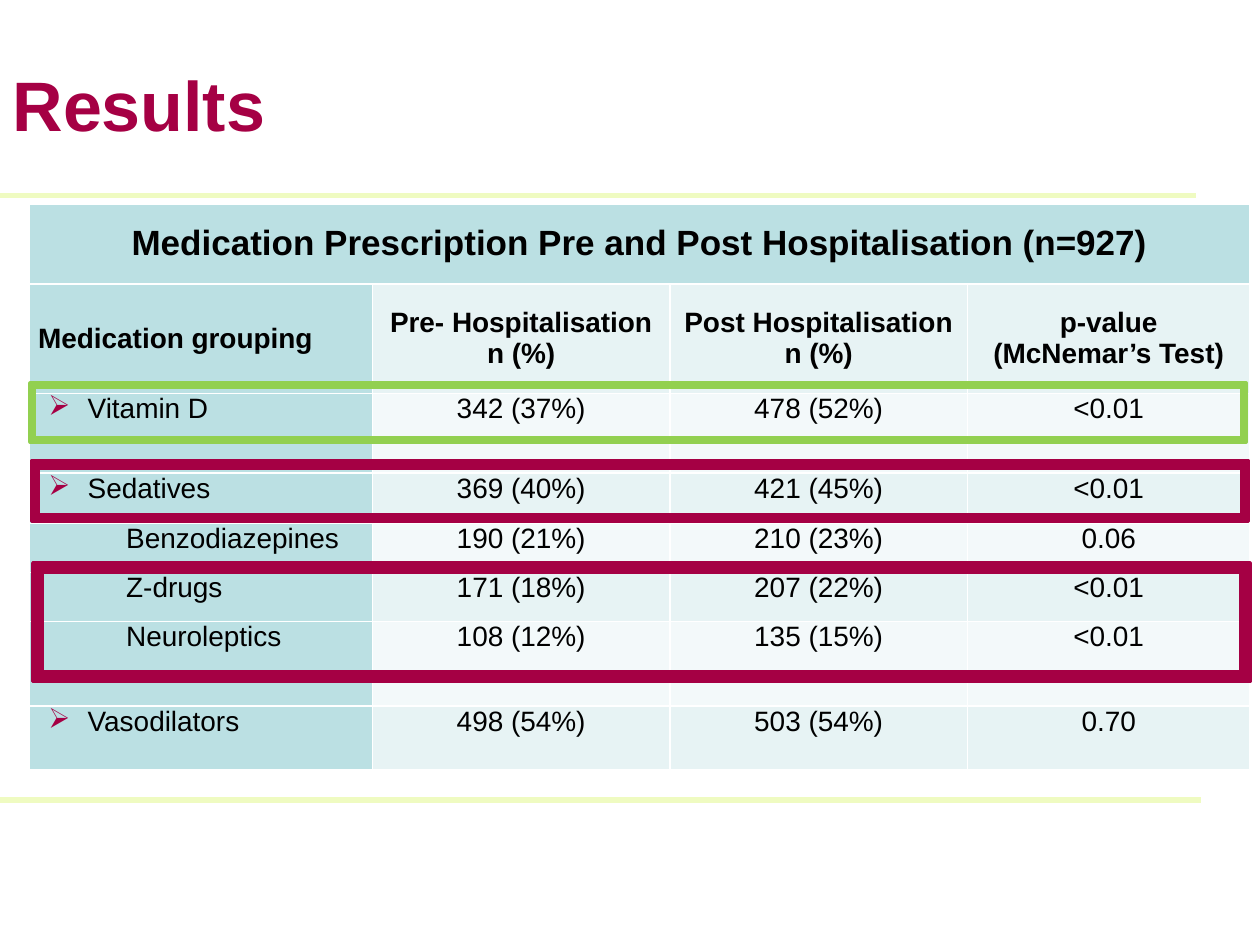
"""Build the results slide: medication prescription before and after hospitalisation."""
import dataclasses

import lxml.etree
import pptx
import pptx.dml.color
import pptx.enum.shapes
import pptx.enum.text
import pptx.oxml.ns
import pptx.util

Pt = pptx.util.Pt
Align = pptx.enum.text.PP_ALIGN
Anchor = pptx.enum.text.MSO_ANCHOR
qn = pptx.oxml.ns.qn


@dataclasses.dataclass(frozen=True)
class Theme:
    font: str = "Arial"
    crimson: str = "A50044"
    green: str = "92D050"
    rule: str = "EFFBC1"
    label_fill: str = "BBE0E3"
    dark_band: str = "E7F3F4"
    light_band: str = "F3F9FA"
    text: str = "000000"
    title_size: int = 40
    caption_size: int = 20
    body_size: int = 16


theme = Theme()


def rgb(value):
    return pptx.dml.color.RGBColor.from_string(value)


def add_run(paragraph, text, size, color, bold):
    run = paragraph.add_run()
    run.text = text
    run.font.name = theme.font
    run.font.size = Pt(size)
    run.font.bold = bold
    run.font.color.rgb = rgb(color)


presentation = pptx.Presentation()
presentation.slide_width, presentation.slide_height = Pt(720), Pt(540)
slide = presentation.slides.add_slide(presentation.slide_layouts[5])

for y, right in ((111.6, 683.3), (457.2, 686.2)):
    rule = slide.shapes.add_connector(
        pptx.enum.shapes.MSO_CONNECTOR.STRAIGHT, Pt(0), Pt(y), Pt(right), Pt(y))
    rule.line.color.rgb = rgb(theme.rule)
    rule.line.width = Pt(3)
    lxml.etree.SubElement(rule._element.spPr, qn("a:effectLst"))

title = slide.shapes.title
title.left, title.top, title.width, title.height = Pt(0), Pt(3.6), Pt(606.2), Pt(111.6)
title.text_frame.vertical_anchor = Anchor.MIDDLE
title_paragraph = title.text_frame.paragraphs[0]
title_paragraph.alignment = Align.LEFT
add_run(title_paragraph, "Results", theme.title_size, theme.crimson, True)

caption = "Medication Prescription Pre and Post Hospitalisation (n=927)"
headings = (("Medication grouping",), ("Pre- Hospitalisation", "n (%)"),
            ("Post Hospitalisation", "n (%)"), ("p-value", "(McNemar’s Test)"))
medications = (
    ("Vitamin D", "342 (37%)", "478 (52%)", "<0.01"),
    ("Sedatives", "369 (40%)", "421 (45%)", "<0.01"),
    ("Benzodiazepines", "190 (21%)", "210 (23%)", "0.06"),
    ("Z-drugs", "171 (18%)", "207 (22%)", "<0.01"),
    ("Neuroleptics", "108 (12%)", "135 (15%)", "<0.01"),
    ("Vasodilators", "498 (54%)", "503 (54%)", "0.70"),
)
subgroups = ("Benzodiazepines", "Z-drugs", "Neuroleptics")
column_widths = (196, 170, 170, 161.5)
row_heights = (45.4, 62.6, 45.4, 28.8, 28.1, 28.1, 48.2, 36.7)

table = slide.shapes.add_table(
    len(row_heights), len(column_widths), Pt(16.8), Pt(116.9),
    Pt(sum(column_widths)), Pt(sum(row_heights))).table
for column, width in zip(table.columns, column_widths):
    column.width = Pt(width)
for row, height in zip(table.rows, row_heights):
    row.height = Pt(height)

for row_index, row in enumerate(table.rows):
    band = theme.dark_band if row_index % 2 else theme.light_band
    for column_index, cell in enumerate(row.cells):
        is_label = row_index == 0 or column_index == 0
        cell.fill.solid()
        cell.fill.fore_color.rgb = rgb(theme.label_fill if is_label else band)
        cell.margin_left = cell.margin_right = Pt(5)
        cell.margin_top = cell.margin_bottom = Pt(0)

table.cell(0, 0).merge(table.cell(0, 3))
caption_paragraph = table.cell(0, 0).text_frame.paragraphs[0]
caption_paragraph.alignment = Align.CENTER
caption_paragraph.line_spacing = 1.5
caption_paragraph.space_after = Pt(18)
add_run(caption_paragraph, caption, theme.caption_size, theme.text, True)

for column_index, lines in enumerate(headings):
    cell = table.cell(1, column_index)
    cell.vertical_anchor = Anchor.MIDDLE
    for line_index, line in enumerate(lines):
        frame = cell.text_frame
        paragraph = frame.add_paragraph() if line_index else frame.paragraphs[0]
        paragraph.alignment = Align.CENTER if column_index else Align.JUSTIFY
        add_run(paragraph, line, theme.body_size, theme.text, True)

for row_index, values in enumerate(medications, start=2):
    is_subgroup = values[0] in subgroups
    for column_index, value in enumerate(values):
        cell = table.cell(row_index, column_index)
        paragraph = cell.text_frame.paragraphs[0]
        paragraph.alignment = Align.CENTER if column_index else Align.JUSTIFY
        if is_subgroup:
            paragraph.space_after = Pt(6)
        if column_index == 0:
            cell.margin_left = cell.margin_right = Pt(10.8)
            properties = paragraph._p.get_or_add_pPr()
            properties.set("marL", str(Pt(44.5 if is_subgroup else 22.5)))
            properties.set("indent", str(Pt(0 if is_subgroup else -22.5)))
            if not is_subgroup:
                bullet_color = lxml.etree.SubElement(properties, qn("a:buClr"))
                lxml.etree.SubElement(bullet_color, qn("a:srgbClr"), val=theme.crimson)
                lxml.etree.SubElement(properties, qn("a:buChar"), char="➢")
        add_run(paragraph, value, theme.body_size, theme.text, False)

highlights = (
    (18, 263.5, 695.5, 34.6, 0.11, theme.crimson),
    (17.3, 218.9, 694.8, 33.8, 0.07, theme.green),
    (18.7, 321.8, 695.5, 67.7, 0.08, theme.crimson),
)
for left, top, width, height, thickness, color in highlights:
    highlight = slide.shapes.add_shape(
        pptx.enum.shapes.MSO_SHAPE.FRAME, Pt(left), Pt(top), Pt(width), Pt(height))
    highlight.adjustments[0] = thickness
    highlight.shadow.inherit = False
    highlight.fill.solid()
    highlight.fill.fore_color.rgb = rgb(color)
    highlight.line.color.rgb = rgb(color)
    highlight.line.width = Pt(2)

presentation.save("out.pptx")
